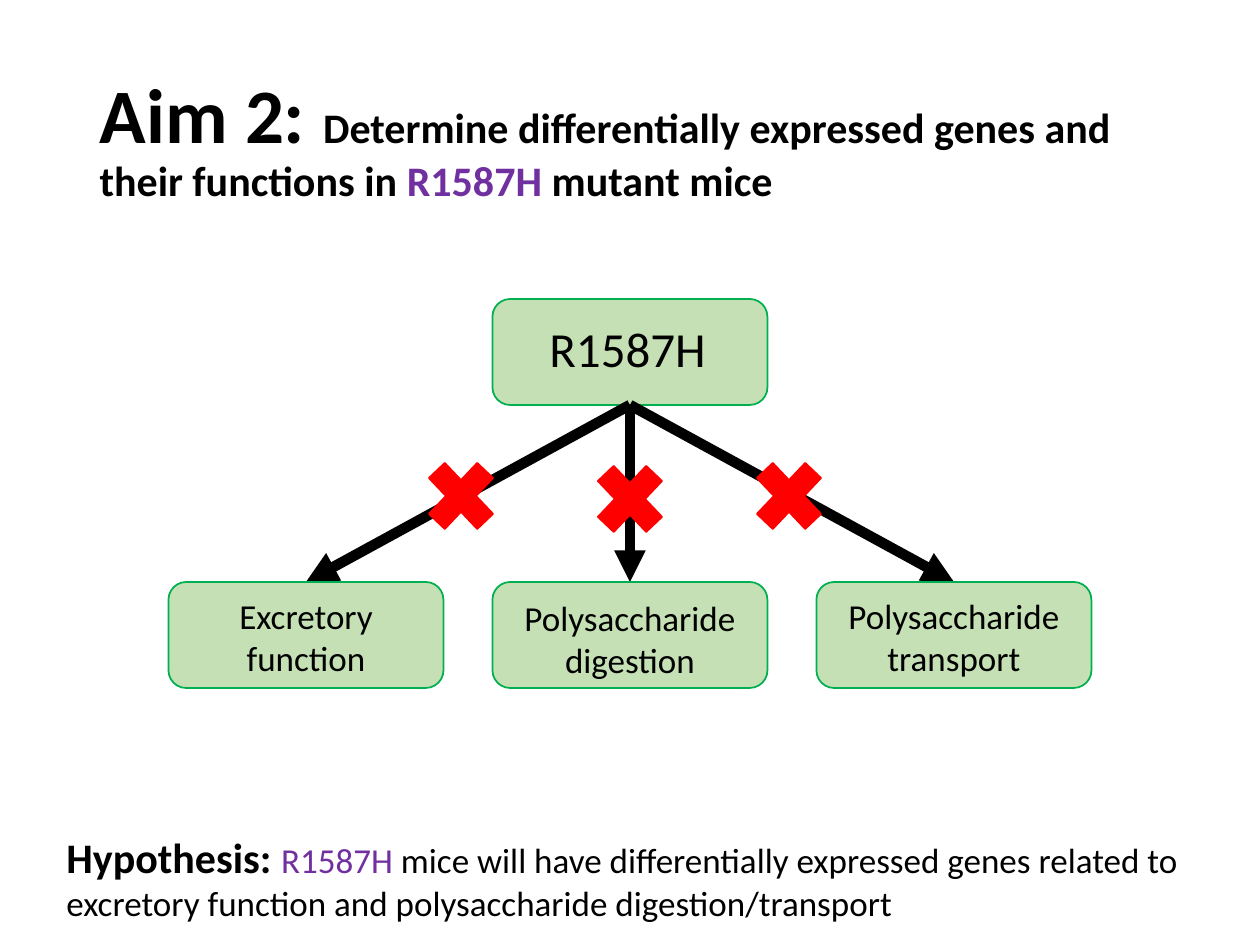
import pptx
import pptx.util
import pptx.dml.color
import pptx.enum.shapes
import pptx.enum.text
import pptx.oxml.ns
import lxml.etree

PX = 914400 // 126
BLACK, PURPLE, RED = "000000", "7030A0", "FF0000"
GREEN, PALE_GREEN = "00B050", "C5E0B4"
SHAPE = pptx.enum.shapes.MSO_SHAPE
ALIGN = pptx.enum.text.PP_ALIGN

# Content: (text, size, bold, colour)
TITLE = [
    ("Aim 2: ", 44, True, BLACK),
    ("Determine differentially expressed genes and their functions in ", 24, True, BLACK),
    ("R1587H", 24, True, PURPLE),
    (" mutant mice", 24, True, BLACK),
]
HYPOTHESIS = [
    ("Hypothesis: ", 24, True, BLACK),
    ("R1587H", 20, False, PURPLE),
    (" mice will have differentially expressed genes related to excretory function"
     " and polysaccharide digestion/transport", 20, False, BLACK),
]
GENE = "R1587H"
# Each function: label, label width, label top, cross centre, cross top
FUNCTIONS = [
    ("Excretory function", 185, 588, 461, 447),
    ("Polysaccharide digestion", 243, 590, 630, 450),
    ("Polysaccharide transport", 243, 588, 789, 447),
]

# Layout in px
CENTRE, STEP = 630, 324
BOX_WIDTH, BOX_HEIGHT = 275, 106
GENE_TOP, FUNCTION_TOP = 299, 582
CROSS_WIDTH, CROSS_HEIGHT = 93, 98


def px(*lengths):
    return [round(length * PX) for length in lengths]


def colour(value):
    return pptx.dml.color.RGBColor.from_string(value)


def add_text(para, text, size=20, bold=False, color=BLACK):
    span = para.add_run()
    span.text = text
    span.font.name = "Calibri"
    span.font.size = pptx.util.Pt(size)
    span.font.bold = bold
    span.font.color.rgb = colour(color)


def add_box(page, left, top, width, height):
    box = page.shapes.add_textbox(*px(left, top, width, height))
    box.text_frame.word_wrap = True
    return box.text_frame.paragraphs[0]


def add_filled(page, kind, centre, top, width, height, fill, line):
    shape = page.shapes.add_shape(kind, *px(centre - width / 2, top, width, height))
    shape.shadow.inherit = False
    shape.fill.solid()
    shape.fill.fore_color.rgb = colour(fill)
    shape.line.color.rgb = colour(line)
    shape.line.width = pptx.util.Pt(1)


def add_node(page, centre, top):
    add_filled(page, SHAPE.ROUNDED_RECTANGLE, centre, top, BOX_WIDTH, BOX_HEIGHT,
               PALE_GREEN, GREEN)


def add_arrow(page, *ends):
    arrow = page.shapes.add_connector(pptx.enum.shapes.MSO_CONNECTOR.STRAIGHT, *px(*ends))
    arrow.line.color.rgb = colour(BLACK)
    arrow.line.width = pptx.util.Pt(6)
    qn = pptx.oxml.ns.qn
    lxml.etree.SubElement(arrow.line._get_or_add_ln(), qn("a:tailEnd"), type="triangle")
    lxml.etree.SubElement(arrow._element.spPr, qn("a:effectLst"))


def main():
    deck = pptx.Presentation()
    deck.slide_width, deck.slide_height = px(1260, 945)
    page = deck.slides.add_slide(deck.slide_layouts[5])

    # Title
    title = page.shapes.title
    title.left, title.top, title.width, title.height = px(87, 50, 1086, 183)
    title.text_frame.vertical_anchor = pptx.enum.text.MSO_ANCHOR.MIDDLE
    heading = title.text_frame.paragraphs[0]
    heading.alignment = ALIGN.LEFT
    heading.line_spacing = 0.9
    for part in TITLE:
        add_text(heading, *part)

    # Hypothesis
    statement = add_box(page, 54, 825, 1153, 106)
    for part in HYPOTHESIS:
        add_text(statement, *part)

    # Gene at the top of the tree
    add_node(page, CENTRE, GENE_TOP)
    add_text(add_box(page, 537, 312, 185, 72), GENE, size=28)

    # Arrows lie behind the function boxes
    centres = [CENTRE + (index - 1) * STEP for index in range(len(FUNCTIONS))]
    for centre in centres:
        add_arrow(page, CENTRE, GENE_TOP + BOX_HEIGHT, centre, FUNCTION_TOP)

    # Functions, each with a cross on its arrow
    for centre, (label, width, top, cross_centre, cross_top) in zip(centres, FUNCTIONS):
        add_node(page, centre, FUNCTION_TOP)
        para = add_box(page, centre - width / 2, top, width, 97)
        para.alignment = ALIGN.CENTER
        add_text(para, label)
        add_filled(page, SHAPE.MATH_MULTIPLY, cross_centre, cross_top,
                   CROSS_WIDTH, CROSS_HEIGHT, RED, RED)

    deck.save("out.pptx")


if __name__ == "__main__":
    main()
